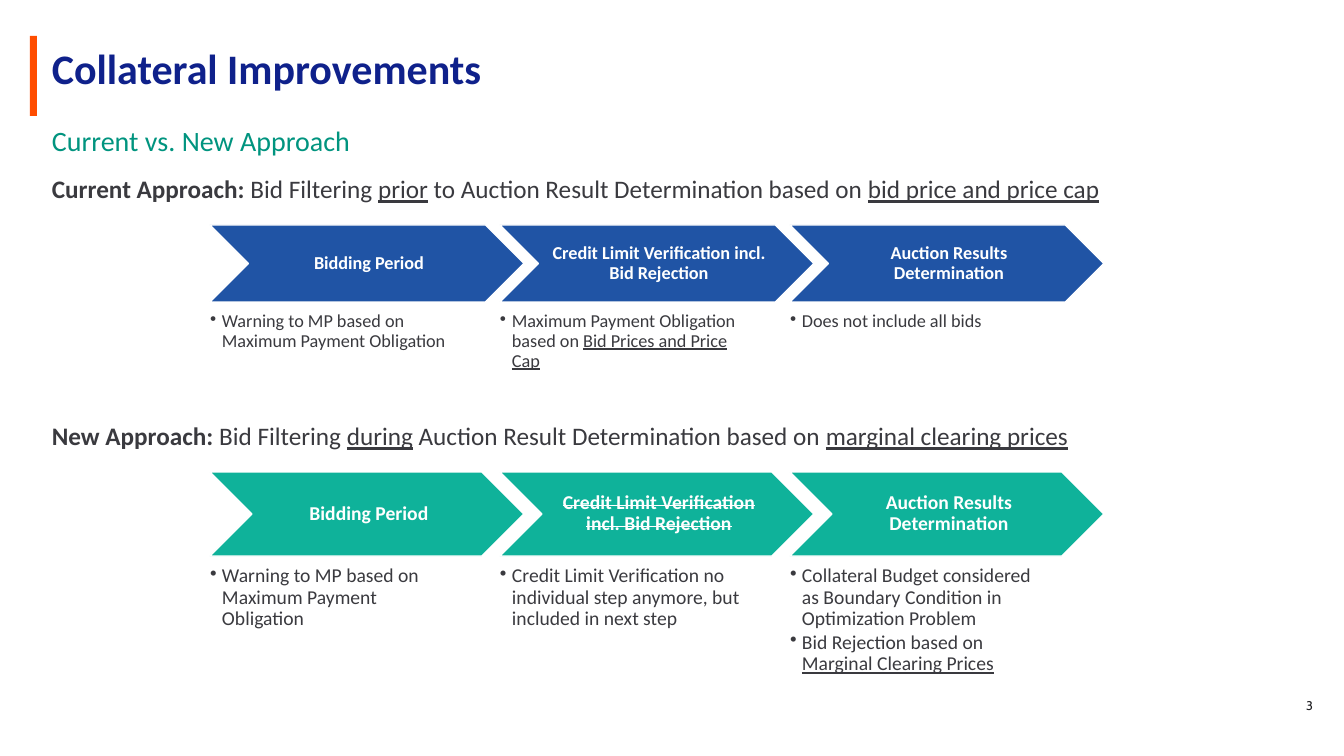
from lxml.etree import SubElement
from pptx import Presentation
from pptx.dml.color import RGBColor
from pptx.enum.shapes import MSO_SHAPE as Shape
from pptx.enum.text import MSO_ANCHOR as Anchor, PP_ALIGN as Align
from pptx.oxml.ns import qn
from pptx.util import Pt

PX = 914400 / 100.8
WHITE = RGBColor(0xFF, 0xFF, 0xFF)
ORANGE = RGBColor(0xFF, 0x4D, 0x00)
NAVY = RGBColor(0x0F, 0x21, 0x8B)
GREEN = RGBColor(0x00, 0x94, 0x7F)
BLUE = RGBColor(0x20, 0x54, 0xA5)
TEAL = RGBColor(0x0F, 0xB2, 0x9A)
GREY = RGBColor(0x3A, 0x3A, 0x3F)
BLACK = RGBColor(0x1D, 0x1D, 0x20)

CURRENT = {
    "head": [("Current Approach: ", "b"), ("Bid Filtering ", ""), ("prior", "u"),
             (" to Auction Result Determination based on ", ""),
             ("bid price and price cap", "u")],
    "steps": [
        ("Bidding Period", "b",
         [[("Warning to MP based on Maximum Payment Obligation", "")]]),
        ("Credit Limit Verification incl. Bid Rejection", "b",
         [[("Maximum Payment Obligation based on ", ""),
           ("Bid Prices and Price Cap", "u")]]),
        ("Auction Results Determination", "b",
         [[("Does not include all bids", "")]]),
    ],
}
NEW = {
    "head": [("New Approach: ", "b"), ("Bid Filtering ", ""), ("during", "u"),
             (" Auction Result Determination based on ", ""),
             ("marginal clearing prices", "u")],
    "steps": [
        ("Bidding Period", "b",
         [[("Warning to MP based on Maximum Payment Obligation", "")]]),
        ("Credit Limit Verification incl. Bid Rejection", "bs",
         [[("Credit Limit Verification no individual step anymore, "
            "but included in next step", "")]]),
        ("Auction Results Determination", "b",
         [[("Collateral Budget considered as Boundary Condition "
            "in Optimization Problem", "")],
          [("Bid Rejection based on ", ""), ("Marginal Clearing Prices", "u")]]),
    ],
}


def px(*vals):
    """Turn pixel lengths into EMU."""
    return [round(val * PX) for val in vals]


def write(par, runs, size, color, face="Calibri", lead=0.9):
    """Fill a paragraph with styled runs: b bold, u underlined, s struck."""
    par.line_spacing = lead
    for text, style in runs:
        run = par.add_run()
        run.text = text
        font = run.font
        font.name, font.size, font.color.rgb = face, Pt(size), color
        font.bold = "b" in style
        font.underline = "u" in style
        if "s" in style:
            run._r.get_or_add_rPr().set("strike", "sngStrike")


def pad(frame, left, top, right, bottom):
    """Set the inner margins of a text frame."""
    (frame.margin_left, frame.margin_top,
     frame.margin_right, frame.margin_bottom) = px(left, top, right, bottom)


def label(slide, box, anchor=Anchor.TOP):
    """Add a wrapping text box and return its frame."""
    frame = slide.shapes.add_textbox(*px(*box)).text_frame
    frame.word_wrap = True
    frame.vertical_anchor = anchor
    return frame


def solid(slide, kind, box, color):
    """Add a flat filled shape without an outline."""
    shape = slide.shapes.add_shape(kind, *px(*box))
    shape.shadow.inherit = False
    shape.fill.solid()
    shape.fill.fore_color.rgb = color
    shape.line.fill.background()
    return shape


def header(slide, left, top, width):
    """Place the accent bar, the title and the subtitle."""
    solid(slide, Shape.RECTANGLE, (left, top, 7, 80), ORANGE)
    title = label(slide, (left + 12, top + 15, width, 39), Anchor.MIDDLE)
    write(title.paragraphs[0], [("Collateral Improvements", "b")],
          30, NAVY, lead=Pt(32))
    sub = label(slide, (left + 12, top + 80, width, 48))
    write(sub.paragraphs[0], [("Current vs. New Approach", "")],
          20, GREEN, lead=Pt(26))


def arrow(slide, box, text, style, size, color):
    """Place one chevron with its step name."""
    shape = solid(slide, Shape.CHEVRON, box, color)
    shape.line.color.rgb = WHITE
    shape.line.width = Pt(1)
    frame = shape.text_frame
    frame.word_wrap = True
    frame.vertical_anchor = Anchor.MIDDLE
    pad(frame, 6, 2, 2, 2)
    par = frame.paragraphs[0]
    par.alignment = Align.CENTER
    write(par, [(text, style)], size, WHITE)


def points(slide, box, items, size):
    """Place the bullet list of one step."""
    frame = label(slide, box)
    pad(frame, 0, 0, 0, 0)
    for num, runs in enumerate(items):
        par = frame.add_paragraph() if num else frame.paragraphs[0]
        props = par._p.get_or_add_pPr()
        indent, = px(12)
        props.set("marL", str(indent))
        props.set("indent", str(-indent))
        SubElement(props, qn("a:buChar")).set("char", "•")
        par.space_after = Pt(2)
        write(par, runs, size, GREY)


def flow(slide, box, data, high, size, color):
    """Place an approach: its headline, chevrons and bullet lists."""
    left, top, width, height = box
    head = label(slide, (left, top, width, 40))
    write(head.paragraphs[0], data["head"], 18, GREY)
    row = top + 53
    low = row + high + 10
    for num, (text, style, items) in enumerate(data["steps"]):
        x = left + 168 + 290 * num
        arrow(slide, (x, row, 314, high), text, style, size, color)
        points(slide, (x, low, 251, top + height - low), items, size)


def footer(slide, box):
    """Place the page number."""
    par = label(slide, box, Anchor.MIDDLE).paragraphs[0]
    par.alignment = Align.RIGHT
    write(par, [("3", "")], 9, BLACK, "Cabin", Pt(9))


def main():
    """Build the slide and save it."""
    deck = Presentation()
    deck.slide_width, deck.slide_height = px(1344, 756)
    slide = deck.slides.add_slide(deck.slide_layouts[6])
    header(slide, 30, 36, 1281)
    flow(slide, (42, 172, 1230, 201), CURRENT, 77, 13, BLUE)
    flow(slide, (42, 419, 1230, 276), NEW, 84, 14, TEAL)
    footer(slide, (680, 687, 643, 40))
    deck.save("out.pptx")


if __name__ == "__main__":
    main()
